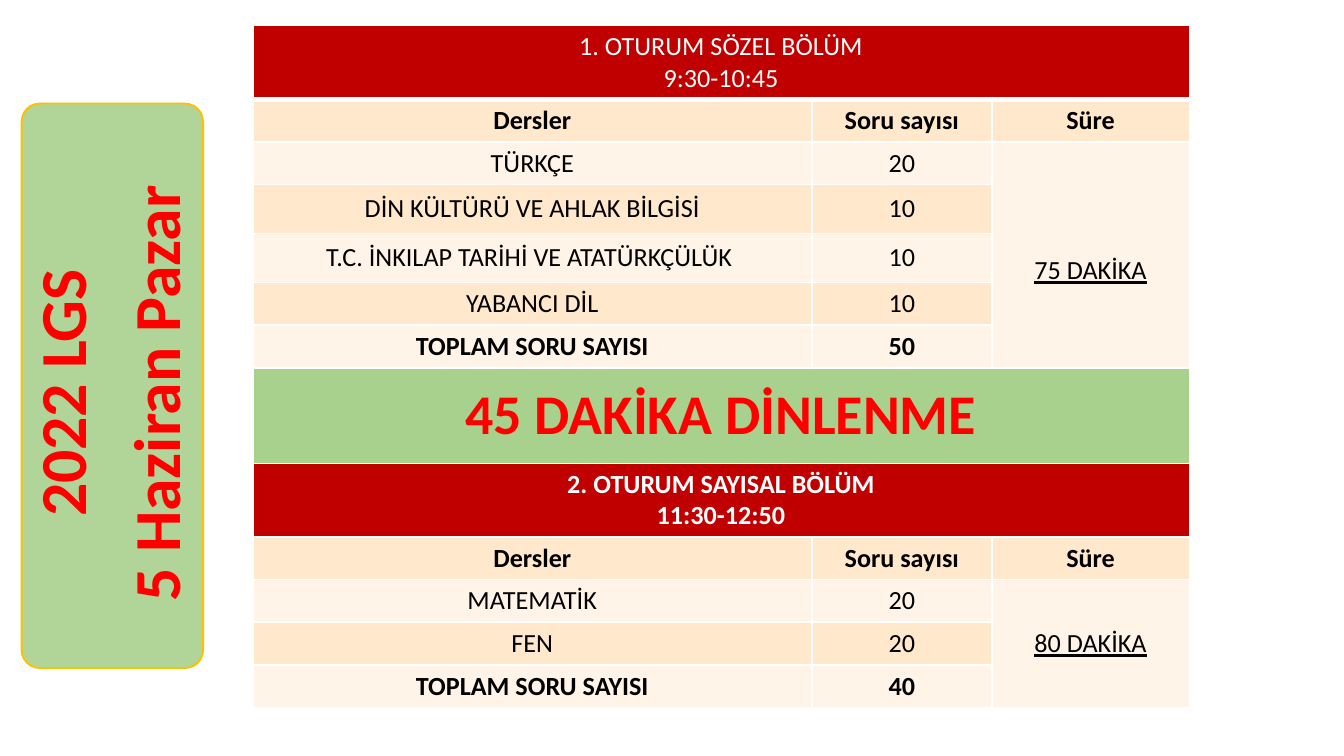
from lxml.etree import SubElement
from pptx import Presentation
from pptx.dml.color import RGBColor
from pptx.enum.shapes import MSO_SHAPE as Shape
from pptx.enum.text import MSO_ANCHOR as Anchor, PP_ALIGN as Align
from pptx.oxml.ns import qn
from pptx.util import Pt

FONT = "Calibri"
WHITE, BLACK, RED = "FFFFFF", "000000", "FF0000"
DARK_RED, GREEN, GOLD = "C00000", "A9D18E", "FFC000"
DARK_BAND, LIGHT_BAND = "FFE8CC", "FFF4E7"

COLUMN_WIDTHS = [299.5, 96.5, 105.8]
TITLE_HEIGHT, ROW_HEIGHT, TALL_HEIGHT, BREAK_HEIGHT = 39.4, 22.9, 26.3, 51.1
LINE_HEIGHT = 17

HEADINGS = ["Dersler", "Soru sayısı", "Süre"]
TOTAL = "TOPLAM SORU SAYISI"
# Each lesson: name, number of questions, row height
VERBAL = [
    ("TÜRKÇE", 20, ROW_HEIGHT),
    ("DİN KÜLTÜRÜ VE AHLAK BİLGİSİ", 10, TALL_HEIGHT),
    ("T.C. İNKILAP TARİHİ VE ATATÜRKÇÜLÜK ", 10, TALL_HEIGHT),
    ("YABANCI DİL", 10, ROW_HEIGHT),
]
NUMERIC = [("MATEMATİK", 20, ROW_HEIGHT), ("FEN", 20, ROW_HEIGHT)]


def color(value):
    return RGBColor.from_string(value)


def style_paragraph(paragraph, size, text_color, bold, underline=False):
    paragraph.alignment = Align.CENTER
    font = paragraph.font
    font.name, font.size = FONT, Pt(size)
    font.bold, font.underline = bold, underline
    font.color.rgb = color(text_color)


def set_borders(cell, bottom=1):
    """Draw white borders; they must come before the fill in the cell XML."""
    properties = cell._tc.get_or_add_tcPr()
    for side, width in (("L", 1), ("R", 1), ("T", 1), ("B", bottom)):
        line = SubElement(properties, qn(f"a:ln{side}"), w=str(Pt(width)))
        fill = SubElement(line, qn("a:solidFill"))
        SubElement(fill, qn("a:srgbClr"), val=WHITE)


def fill_cell(cell, text, fill, text_color=BLACK, size=14, bold=False,
              underline=False, bottom=1):
    set_borders(cell, bottom)
    cell.fill.solid()
    cell.fill.fore_color.rgb = color(fill)
    cell.vertical_anchor = Anchor.MIDDLE
    cell.margin_left = cell.margin_right = Pt(4.3)
    cell.margin_top = cell.margin_bottom = Pt(2.6)
    cell.text_frame.text = text
    for paragraph in cell.text_frame.paragraphs:
        style_paragraph(paragraph, size, text_color, bold, underline)


def add_banner(table, row, text, fill, **style):
    """Fill one row merged across the whole table."""
    cell = table.cell(row, 0)
    cell.merge(table.cell(row, len(COLUMN_WIDTHS) - 1))
    fill_cell(cell, text, fill, **style)


def add_session(table, top, title, lessons, duration, bold_title, title_bottom=1):
    """Fill a session from row top and return its duration cell."""
    add_banner(table, top, title, DARK_RED, text_color=WHITE,
               bold=bold_title, bottom=title_bottom)
    for column, heading in enumerate(HEADINGS):
        fill_cell(table.cell(top + 1, column), heading, DARK_BAND, bold=True)

    first = top + 2
    rows = [(name, count) for name, count, _ in lessons]
    rows.append((TOTAL, sum(count for _, count in rows)))
    for index, values in enumerate(rows):
        band = DARK_BAND if index % 2 else LIGHT_BAND
        for column, value in enumerate(values):
            fill_cell(table.cell(first + index, column), str(value), band,
                      bold=index == len(lessons))

    duration_cell = table.cell(first, 2)
    duration_cell.merge(table.cell(first + len(lessons), 2))
    fill_cell(duration_cell, duration, LIGHT_BAND, underline=True)
    return duration_cell


def session_heights(lessons):
    return [TITLE_HEIGHT, ROW_HEIGHT, *(height for *_, height in lessons), ROW_HEIGHT]


def add_schedule(slide, left, top):
    heights = [*session_heights(VERBAL), BREAK_HEIGHT, *session_heights(NUMERIC)]
    table = slide.shapes.add_table(
        len(heights), len(COLUMN_WIDTHS), Pt(left), Pt(top),
        Pt(sum(COLUMN_WIDTHS)), Pt(sum(heights))).table
    table.first_row = table.horz_banding = False
    for column, width in zip(table.columns, COLUMN_WIDTHS):
        column.width = Pt(width)
    for row, height in zip(table.rows, heights):
        row.height = Pt(height)

    break_row = len(session_heights(VERBAL))
    duration_cell = add_session(table, 0, "1. OTURUM SÖZEL BÖLÜM\n9:30-10:45", VERBAL,
                                "75 DAKİKA", bold_title=False, title_bottom=3)
    duration_cell.margin_top += Pt(LINE_HEIGHT)
    add_banner(table, break_row, "45 DAKİKA DİNLENME", GREEN,
               text_color=RED, size=30, bold=True)
    add_session(table, break_row + 1, "2. OTURUM SAYISAL BÖLÜM\n11:30-12:50", NUMERIC,
                "80 DAKİKA", bold_title=True)


def add_date_panel(slide, left, top, width, height):
    group = slide.shapes.add_group_shape()
    panel = group.shapes.add_shape(
        Shape.ROUNDED_RECTANGLE, Pt(left), Pt(top), Pt(width), Pt(height))
    panel.shadow.inherit = False
    panel.adjustments[0] = 0.1
    panel.fill.solid()
    panel.fill.fore_color.rgb = color(GREEN)
    fill_color = panel.fill._xPr.find(qn("a:solidFill"))[0]
    SubElement(fill_color, qn("a:alpha"), val="90000")
    panel.line.color.rgb = color(GOLD)
    panel.line.width = Pt(1)

    inset_x, inset_y = 2, 9
    label = group.shapes.add_textbox(
        Pt(left + inset_x), Pt(top + inset_y),
        Pt(width - 2 * inset_x), Pt(height - 2 * inset_y))
    frame = label.text_frame
    frame.word_wrap = True
    frame.vertical_anchor = Anchor.MIDDLE
    frame.margin_left = frame.margin_right = Pt(10.8)
    frame.margin_top = frame.margin_bottom = Pt(10.8)
    frame._txBody.bodyPr.set("vert", "vert270")
    frame.text = "2022 LGS \n5 Haziran Pazar "
    for paragraph in frame.paragraphs:
        style_paragraph(paragraph, 35.2, RED, bold=True)
        paragraph.line_spacing = 0.9
        paragraph.space_after = Pt(12.3)


def main():
    presentation = Presentation()
    presentation.slide_width, presentation.slide_height = Pt(720), Pt(405)
    slide = presentation.slides.add_slide(presentation.slide_layouts[6])
    add_schedule(slide, 135.4, 13.7)
    add_date_panel(slide, 11.6, 55.5, 97.2, 302.4)
    presentation.save("out.pptx")


if __name__ == "__main__":
    main()
